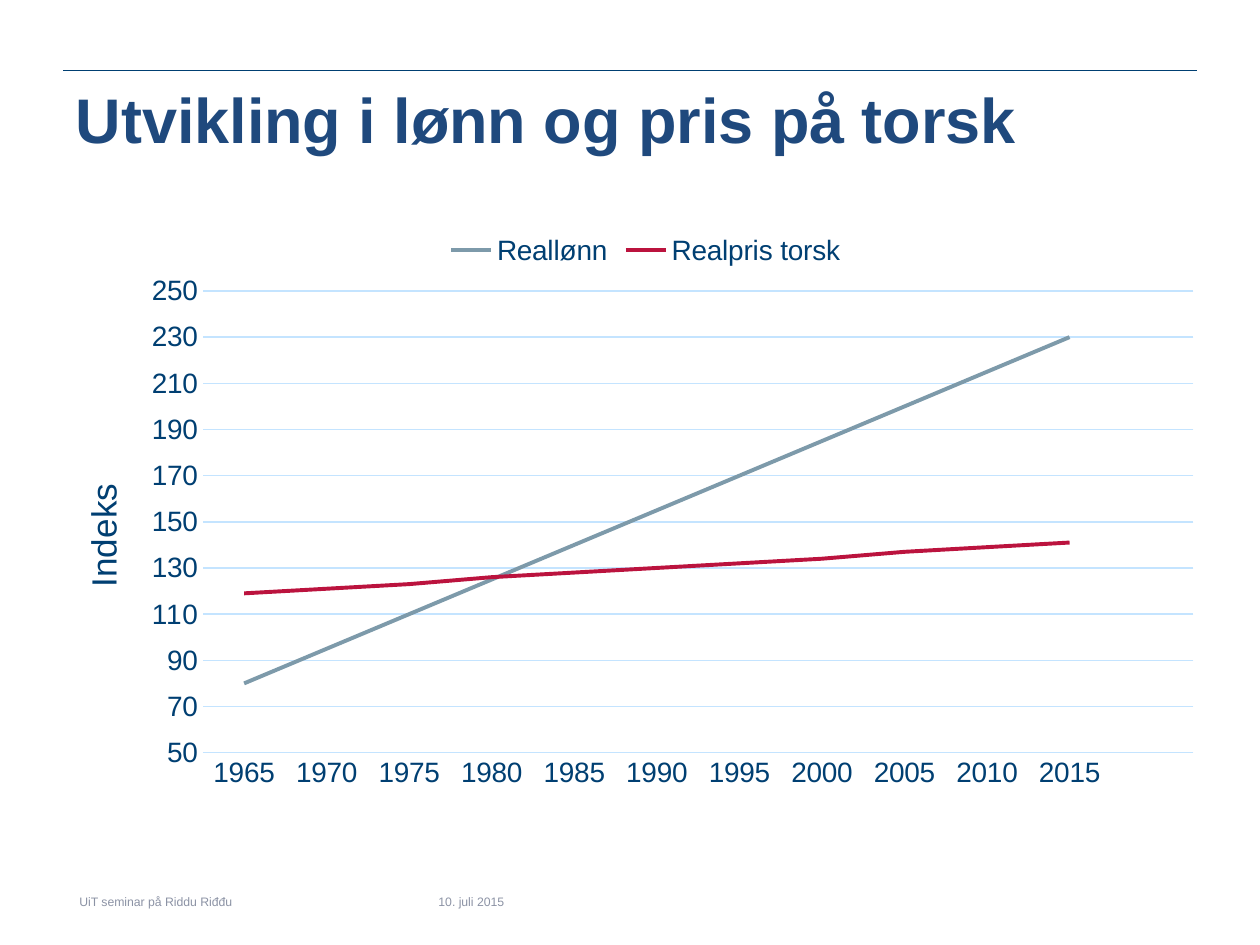
"""Build a slide with a line chart of real wages and real cod prices."""
import pptx
import pptx.util
import pptx.chart.data
import pptx.dml.color
import pptx.enum.chart
import pptx.enum.shapes
import pptx.enum.text
import pptx.oxml
import pptx.oxml.ns

Inches, Pt = pptx.util.Inches, pptx.util.Pt
NAVY, GRID, GREY = "003F72", "C4E4FF", "8C93A5"


def style(font, size, tint, bold=False):
    """Set face, size, colour and weight of a font."""
    font.name, font.size, font.bold = "Arial", Pt(size), bold
    font.color.rgb = pptx.dml.color.RGBColor.from_string(tint)


def stroke(line, tint, width):
    """Set colour and width of a line."""
    line.color.rgb = pptx.dml.color.RGBColor.from_string(tint)
    line.width = Pt(width)


deck = pptx.Presentation()
deck.slide_width, deck.slide_height = Inches(10), Inches(7.5)
slide = deck.slides.add_slide(deck.slide_layouts[5])

rule = slide.shapes.add_connector(
    pptx.enum.shapes.MSO_CONNECTOR.STRAIGHT,
    Inches(0.5), Inches(0.56), Inches(9.5), Inches(0.56))
stroke(rule.line, NAVY, 0.5)
pptx.oxml.ns.qn("a:effectLst")
rule._element.spPr.append(pptx.oxml.parse_xml(
    f'<a:effectLst {pptx.oxml.ns.nsdecls("a")}/>'))

title = slide.shapes.title
foot = slide.shapes.add_textbox(0, 0, 0, 0)
date = slide.shapes.add_textbox(0, 0, 0, 0)
for box, place, text, size, tint, bold in (
        (title, (0.6, 0.64, 8.78, 0.61),
         "Utvikling i lønn og pris på torsk", 36, "1F497D", True),
        (foot, (0.63, 7.1, 2.73, 0.4),
         "UiT seminar på Riddu Riđđu", 7, GREY, False),
        (date, (3.48, 7.1, 1.21, 0.4), "10. juli 2015", 7, GREY, False)):
    box.left, box.top, box.width, box.height = map(Inches, place)
    frame = box.text_frame
    frame.margin_left = frame.margin_right = 0
    frame.margin_top = frame.margin_bottom = 0
    frame.word_wrap = True
    frame.auto_size = pptx.enum.text.MSO_AUTO_SIZE.NONE
    frame.vertical_anchor = pptx.enum.text.MSO_ANCHOR.TOP
    para = frame.paragraphs[0]
    para.alignment = pptx.enum.text.PP_ALIGN.LEFT
    run = para.add_run()
    run.text = text
    style(run.font, size, tint, bold)

data = pptx.chart.data.CategoryChartData()
data.categories = [str(year) for year in range(1965, 2016, 5)] + [""]
data.add_series("Reallønn", [*range(80, 231, 15), None])
data.add_series("Realpris torsk", [
    119, 121, 123, 126, 128, 130, 132, 134, 137, 139, 141, None])
chart = slide.shapes.add_chart(
    pptx.enum.chart.XL_CHART_TYPE.LINE, Inches(0.5), Inches(1.75),
    Inches(9.25), Inches(5.09), data).chart
style(chart.font, 10, NAVY)
chart.has_title = False
chart.has_legend = True
chart.legend.position = pptx.enum.chart.XL_LEGEND_POSITION.TOP
chart.legend.include_in_layout = False
style(chart.legend.font, 16, NAVY)

chart.plots[0].vary_by_categories = False
for row, tint in zip(chart.plots[0].series, ("7D9AAA", "BB133E")):
    row.smooth = False
    row.marker.style = pptx.enum.chart.XL_MARKER_STYLE.NONE
    stroke(row.format.line, tint, 2.25)

years, index = chart.category_axis, chart.value_axis
for axis in (years, index):
    axis.major_tick_mark = pptx.enum.chart.XL_TICK_MARK.NONE
    axis.minor_tick_mark = pptx.enum.chart.XL_TICK_MARK.NONE
    style(axis.tick_labels.font, 16, NAVY)
stroke(years.format.line, GRID, 0.75)
index.format.line.fill.background()
index.minimum_scale, index.maximum_scale = 50, 250
index.major_unit = 20
index.has_major_gridlines = True
stroke(index.major_gridlines.format.line, GRID, 0.75)
run = index.axis_title.text_frame.paragraphs[0].add_run()
run.text = "Indeks"
style(run.font, 20, NAVY)

plot = chart._chartSpace.chart.plotArea
head = index.axis_title._element
for part, spot, inner, sides in (
        (plot, 0, '<c:layoutTarget val="inner"/>',
         {"x": 0.12, "y": 0.11, "w": 0.85, "h": 0.72}),
        (head, 1, "", {"x": 0.01, "y": 0.4})):
    for old in part.findall(pptx.oxml.ns.qn("c:layout")):
        part.remove(old)
    modes = "".join(f'<c:{key}Mode val="edge"/>' for key in "xy")
    sizes = "".join(f'<c:{key} val="{val}"/>' for key, val in sides.items())
    part.insert(spot, pptx.oxml.parse_xml(
        f'<c:layout {pptx.oxml.ns.nsdecls("c")}><c:manualLayout>'
        f'{inner}{modes}{sizes}</c:manualLayout></c:layout>'))

deck.save("out.pptx")
